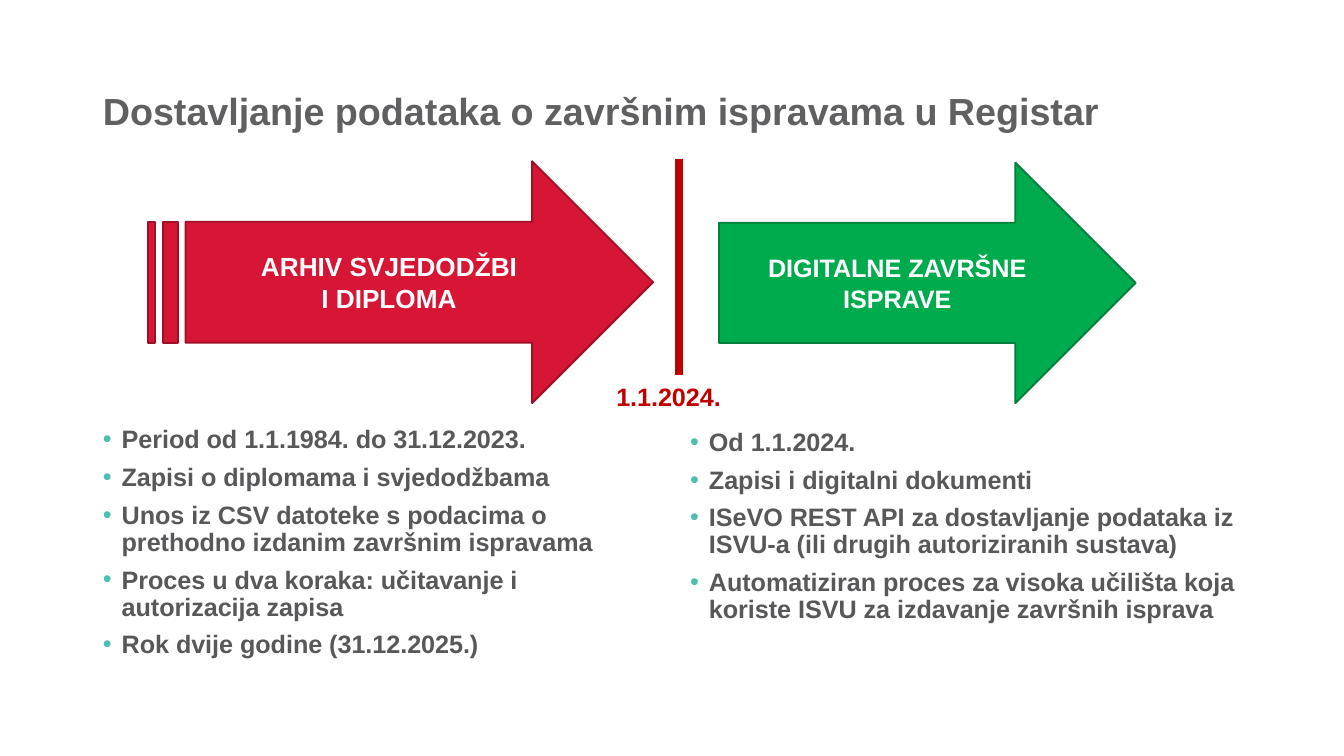
from dataclasses import dataclass
from typing import NamedTuple

from lxml.etree import SubElement
from pptx import Presentation
from pptx.dml.color import RGBColor
from pptx.enum.shapes import MSO_CONNECTOR, MSO_SHAPE
from pptx.enum.text import MSO_ANCHOR, PP_ALIGN
from pptx.oxml.ns import qn
from pptx.util import Pt


class Box(NamedTuple):
    left: float
    top: float
    width: float
    height: float

    def lengths(self):
        return [Pt(value) for value in self]


@dataclass(frozen=True)
class Theme:
    font: str = "Arial"
    title: str = "606062"
    body: str = "58585A"
    bullet: str = "4CC0AD"
    cutoff: str = "C00000"
    archive: str = "D71635"
    archive_edge: str = "9F1027"
    digital: str = "00AB4E"
    digital_edge: str = "007F3A"
    on_arrow: str = "FFFFFF"
    title_size: float = 20.2
    text_size: float = 13.5
    archive_size: float = 14
    indent: float = 10.08


THEME = Theme()


def color(code):
    return RGBColor.from_string(code)


def style(para, size, code):
    font = para.font
    font.name = THEME.font
    font.size = Pt(size)
    font.bold = True
    font.color.rgb = color(code)


def add_frame(page, box, side=5.4, edge=2.7):
    frame = page.shapes.add_textbox(*box.lengths()).text_frame
    frame.word_wrap = True
    frame.margin_left = frame.margin_right = Pt(side)
    frame.margin_top = frame.margin_bottom = Pt(edge)
    return frame


def add_bullet(para):
    properties = para._p.get_or_add_pPr()
    properties.set("marL", str(Pt(THEME.indent)))
    properties.set("indent", str(-Pt(THEME.indent)))
    bullet_color = SubElement(properties, qn("a:buClr"))
    SubElement(bullet_color, qn("a:srgbClr"), val=THEME.bullet)
    SubElement(properties, qn("a:buFont"), typeface=THEME.font)
    SubElement(properties, qn("a:buChar"), char="•")


def add_title(page, box, text):
    frame = add_frame(page, box)
    frame.vertical_anchor = MSO_ANCHOR.MIDDLE
    para = frame.paragraphs[0]
    para.text = text
    para.line_spacing = 0.9
    style(para, THEME.title_size, THEME.title)


def add_points(page, box, points):
    frame = add_frame(page, box)
    for index, point in enumerate(points):
        para = frame.add_paragraph() if index else frame.paragraphs[0]
        para.text = point
        para.line_spacing = 0.9
        if index:
            para.space_before = Pt(5.6)
        add_bullet(para)
        style(para, THEME.text_size, THEME.body)


def add_arrow(page, box, preset, lines, fill, edge, size):
    arrow = page.shapes.add_shape(preset, *box.lengths())
    arrow.shadow.inherit = False
    arrow.fill.solid()
    arrow.fill.fore_color.rgb = color(fill)
    arrow.line.color.rgb = color(edge)
    arrow.line.width = Pt(1)
    frame = arrow.text_frame
    frame.word_wrap = True
    frame.vertical_anchor = MSO_ANCHOR.MIDDLE
    frame.text = "\n".join(lines)
    for para in frame.paragraphs:
        para.alignment = PP_ALIGN.CENTER
        style(para, size, THEME.on_arrow)


def add_cutoff(page, box, date):
    label_height = 23.8
    label_width = 77
    bottom = box.top + box.height - label_height
    line = page.shapes.add_connector(
        MSO_CONNECTOR.STRAIGHT, Pt(box.left), Pt(box.top), Pt(box.left), Pt(bottom)
    )
    line.line.color.rgb = color(THEME.cutoff)
    line.line.width = Pt(4.5)
    SubElement(line._element.spPr, qn("a:effectLst"))
    label = Box(box.left - 43.9, bottom, label_width, label_height)
    para = add_frame(page, label, 7.2, 3.6).paragraphs[0]
    para.text = date
    para.alignment = PP_ALIGN.CENTER
    style(para, THEME.text_size, THEME.cutoff)


def build_slide(page):
    add_title(
        page,
        Box(49.7, 21.6, 620.6, 78.5),
        "Dostavljanje podataka o završnim ispravama u Registar",
    )
    add_points(page, Box(49.7, 226.1, 306, 142.6), [
        "Period od 1.1.1984. do 31.12.2023.",
        "Zapisi o diplomama i svjedodžbama",
        "Unos iz CSV datoteke s podacima o prethodno izdanim završnim ispravama",
        "Proces u dva koraka: učitavanje i autorizacija zapisa",
        "Rok dvije godine (31.12.2025.)",
    ])
    add_points(page, Box(364.3, 227.5, 306, 140.4), [
        "Od 1.1.2024.",
        "Zapisi i digitalni dokumenti",
        "ISeVO REST API za dostavljanje podataka iz ISVU-a (ili drugih autoriziranih sustava)",
        "Automatiziran proces za visoka učilišta koja koriste ISVU za izdavanje završnih isprava",
    ])
    add_cutoff(page, Box(363.6, 85.4, 0, 139.3), "1.1.2024.")
    add_arrow(
        page, Box(79.2, 86.4, 270.7, 129.6), MSO_SHAPE.STRIPED_RIGHT_ARROW,
        ["ARHIV SVJEDODŽBI", "I DIPLOMA"],
        THEME.archive, THEME.archive_edge, THEME.archive_size,
    )
    add_arrow(
        page, Box(385.2, 87.1, 223.2, 128.9), MSO_SHAPE.RIGHT_ARROW,
        ["DIGITALNE ZAVRŠNE ISPRAVE"],
        THEME.digital, THEME.digital_edge, THEME.text_size,
    )


def main():
    deck = Presentation()
    deck.slide_width = Pt(720)
    deck.slide_height = Pt(405)
    build_slide(deck.slides.add_slide(deck.slide_layouts[6]))
    deck.save("out.pptx")


if __name__ == "__main__":
    main()
